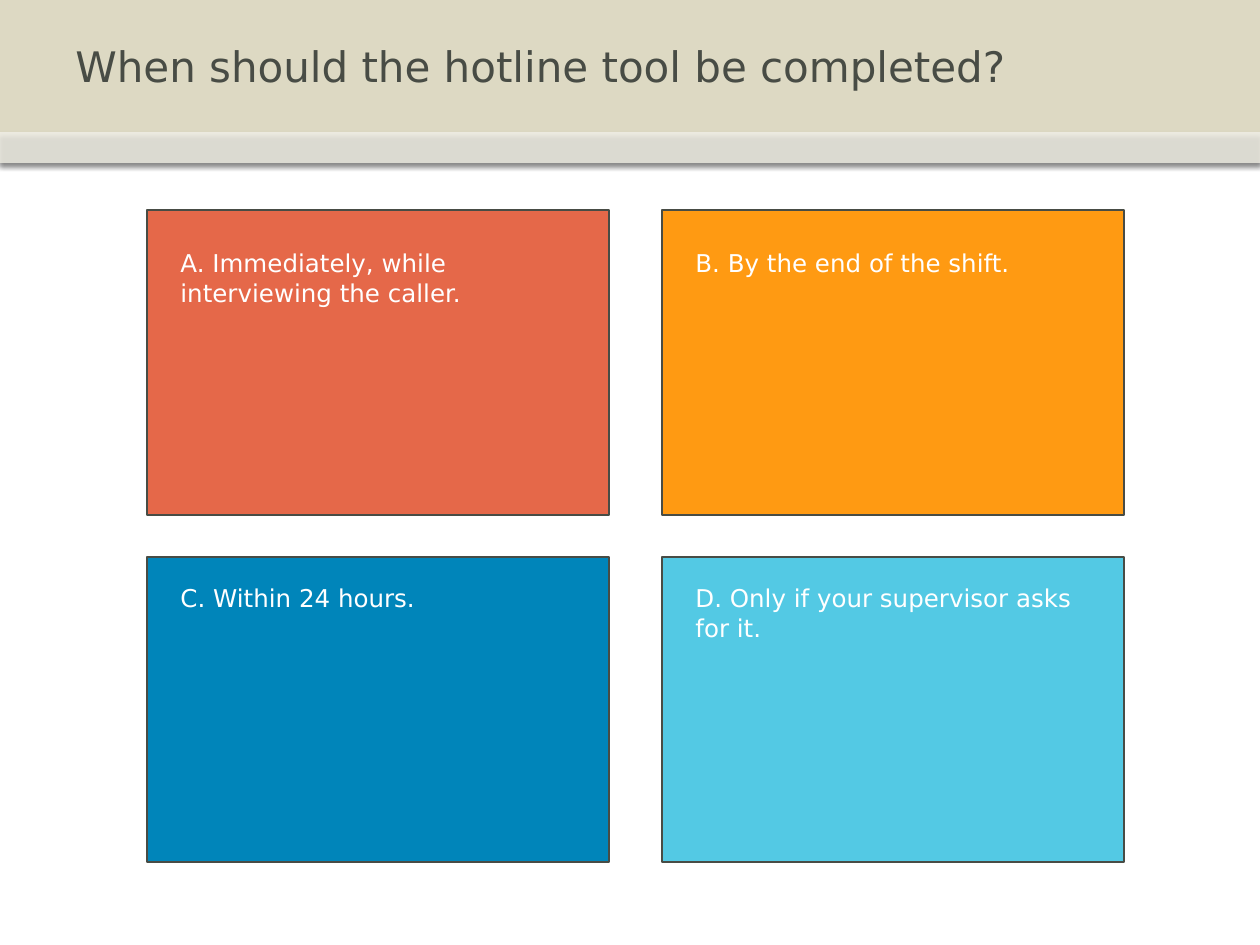
from lxml import etree
from pptx import Presentation
from pptx.dml.color import RGBColor
from pptx.enum.shapes import MSO_SHAPE
from pptx.enum.text import MSO_ANCHOR, MSO_AUTO_SIZE
from pptx.oxml.ns import qn
from pptx.util import Emu, Pt

RECT = MSO_SHAPE.RECTANGLE
TOP, MIDDLE = MSO_ANCHOR.TOP, MSO_ANCHOR.MIDDLE
GROW, FIXED = MSO_AUTO_SIZE.SHAPE_TO_FIT_TEXT, MSO_AUTO_SIZE.NONE
PX_PER_INCH = 126
SLIDE_W, SLIDE_H = 1260, 945


def px(n):
    return Emu(round(n * 914400 / PX_PER_INCH))


def color(value):
    return RGBColor.from_string(value)


class Deck:
    font = "DejaVu Sans"
    dark = "484C45"
    white = "FFFFFF"
    sand = "DDD9C3"

    def __init__(self):
        self.prs = Presentation()
        self.prs.slide_width, self.prs.slide_height = px(SLIDE_W), px(SLIDE_H)
        self.s = self.prs.slides.add_slide(self.prs.slide_layouts[6])

    def rect(self, x, y, w, h, fill, line=None):
        sp = self.s.shapes.add_shape(RECT, px(x), px(y), px(w), px(h))
        sp.shadow.inherit = False
        sp.fill.solid()
        sp.fill.fore_color.rgb = color(fill)
        if line:
            sp.line.color.rgb = color(line)
            sp.line.width = Pt(0.75)
        else:
            sp.line.fill.background()
        return sp

    def band(self, x, y, w, h, fill, alpha=100):
        """Borderless rectangle with a soft shadow below it."""
        sp = self.rect(x, y, w, h, fill)
        if alpha < 100:
            clr = sp.fill._xPr.find(qn("a:solidFill"))[0]
            etree.SubElement(clr, qn("a:alpha"), val=str(alpha * 1000))
        effects = sp._element.spPr.find(qn("a:effectLst"))
        shadow = etree.SubElement(effects, qn("a:outerShdw"), blurRad=str(Pt(3.1)),
                                  dist=str(Pt(1.8)), dir="5400000", rotWithShape="0")
        clr = etree.SubElement(shadow, qn("a:srgbClr"), val="000000")
        etree.SubElement(clr, qn("a:alpha"), val="35000")

    def text(self, x, y, w, h, words, size, fill, anchor=TOP, fit=GROW):
        sp = self.s.shapes.add_textbox(px(x), px(y), px(w), px(h))
        tf = sp.text_frame
        tf.word_wrap = True
        tf.auto_size = fit
        tf.vertical_anchor = anchor
        r = tf.paragraphs[0].add_run()
        r.text = words
        r.font.name = self.font
        r.font.size = Pt(size)
        r.font.color.rgb = color(fill)


def main():
    d = Deck()

    # Header bands and title
    d.band(0, 0, SLIDE_W, 163, d.sand)
    d.band(0, 132, SLIDE_W, 31, d.white, alpha=53)
    d.text(63, 0, 1134, 132, "When should the hotline tool be completed?",
           24, d.dark, MIDDLE, FIXED)

    # Answer cards in a two by two grid
    left, top, card_w, card_h = 147, 210, 462, 305
    col_step, row_step = 515, 347
    text_dx, text_dy = 21, (32, 20)
    answers = [
        ("A. Immediately, while interviewing the caller.", "E56849", 410, 72),
        ("B. By the end of the shift.", "FF9A12", 399, 43),
        ("C. Within 24 hours.", "0085BA", 410, 43),
        ("D. Only if your supervisor asks for it.", "53C9E4", 420, 72),
    ]
    for i, (words, fill, text_w, text_h) in enumerate(answers):
        row, col = divmod(i, 2)
        x, y = left + col * col_step, top + row * row_step
        d.rect(x, y, card_w, card_h, fill, d.dark)
        d.text(x + text_dx, y + text_dy[row], text_w, text_h, words, 14, d.white)

    d.prs.save("out.pptx")


if __name__ == "__main__":
    main()
